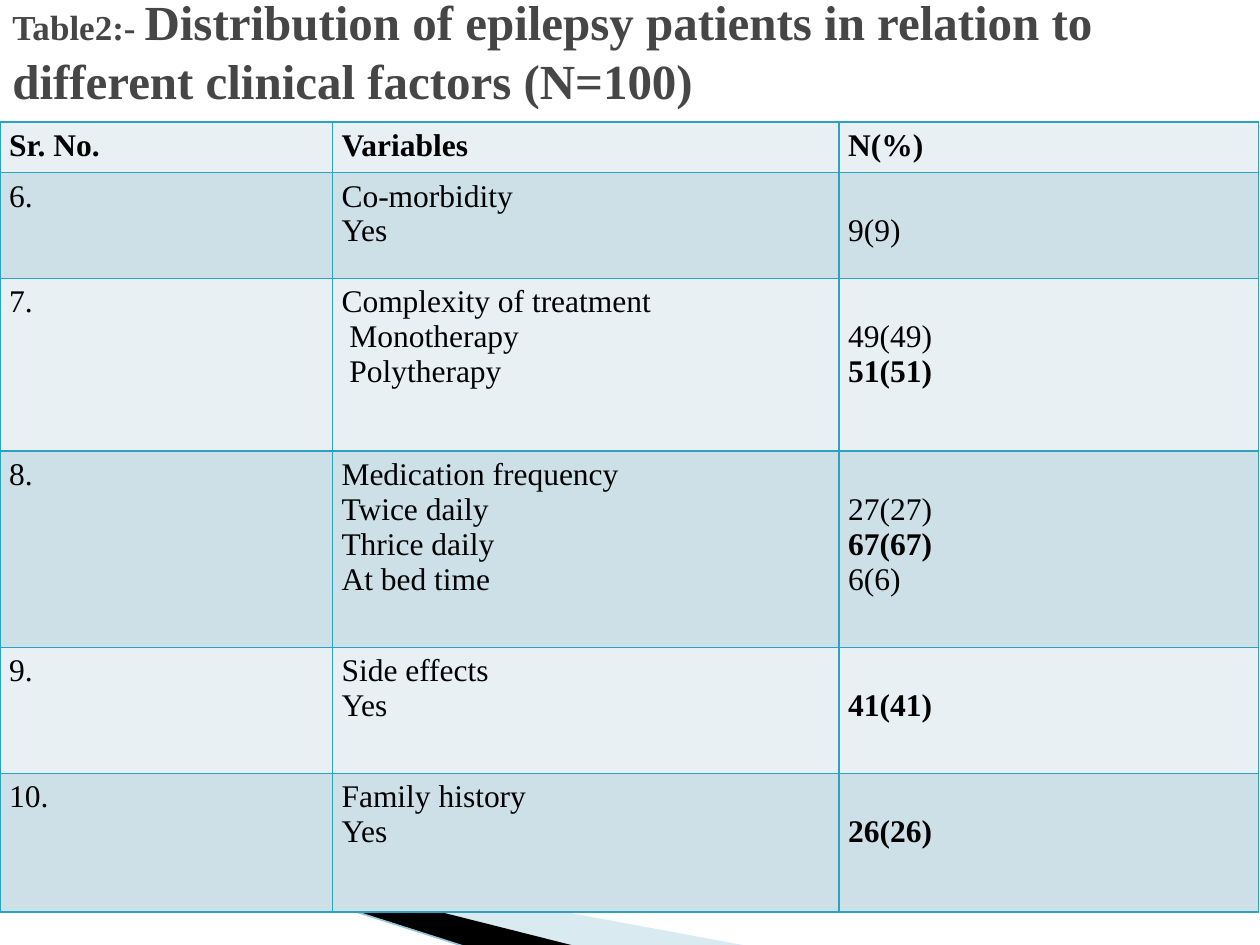
from lxml.etree import SubElement
from pptx import Presentation
from pptx.dml.color import RGBColor
from pptx.enum.shapes import MSO_CONNECTOR
from pptx.enum.text import MSO_ANCHOR
from pptx.oxml.ns import qn
from pptx.util import Pt

FONT = "Times New Roman"
BLACK = RGBColor(0x00, 0x00, 0x00)
GREY = RGBColor(0x46, 0x46, 0x46)
TEAL = RGBColor(0x2D, 0xA2, 0xBF)
PALE_TEAL = RGBColor(0x97, 0xC5, 0xD8)
WEDGE_BLUE = RGBColor(0xA0, 0xCB, 0xDC)
BANDS = [RGBColor(0xE8, 0xF0, 0xF4), RGBColor(0xCD, 0xE0, 0xE8)]
LINE_HEIGHT = 20


def add_text(p, text, size=18, bold=False, color=BLACK, indent=0):
    if indent:
        p._p.get_or_add_pPr().set("marL", str(Pt(indent)))
    r = p.add_run()
    r.text = text
    r.font.name = FONT
    r.font.size = Pt(size)
    r.font.bold = bold
    r.font.color.rgb = color


def add_borders(cell):
    tc_pr = cell._tc.get_or_add_tcPr()
    for side in ("lnL", "lnR", "lnT", "lnB"):
        ln = SubElement(tc_pr, qn(f"a:{side}"), w=str(Pt(1)))
        fill = SubElement(ln, qn("a:solidFill"))
        SubElement(fill, qn("a:srgbClr"), val=str(TEAL))


prs = Presentation()
prs.slide_width, prs.slide_height = Pt(720), Pt(540)
s = prs.slides.add_slide(prs.slide_layouts[6])

# Corner decoration
wedges = [
    (WEDGE_BLUE, 40, [(39.6, 468.7), (428.4, 540.7), (328.3, 540.7), (39.6, 468)]),
    (BLACK, 100, [(38.2, 467.3), (329, 540.7), (267.8, 541.4), (38.9, 468)]),
]
for color, opacity, points in wedges:
    start, *rest = [(Pt(x), Pt(y)) for x, y in points]
    builder = s.shapes.build_freeform(*start)
    builder.add_line_segments(rest, close=True)
    sp = builder.convert_to_shape()
    sp.shadow.inherit = False
    sp.fill.solid()
    sp.fill.fore_color.rgb = color
    sp.line.fill.background()
    if opacity < 100:
        clr = sp.fill._xPr.find(qn("a:solidFill"))[0]
        SubElement(clr, qn("a:alpha"), val=str(opacity * 1000))

edge = s.shapes.add_connector(
    MSO_CONNECTOR.STRAIGHT, Pt(-0.7), Pt(455.8), Pt(267.1), Pt(541.4))
edge.line.color.rgb = PALE_TEAL
edge.line.width = Pt(0.95)
SubElement(edge._element.spPr, qn("a:effectLst"))

# Title
title = s.shapes.add_textbox(Pt(0), Pt(-13.7), Pt(720), Pt(85))
tf = title.text_frame
tf.word_wrap = True
tf.vertical_anchor = MSO_ANCHOR.MIDDLE
p = tf.paragraphs[0]
add_text(p, "Table2:- ", size=20, bold=True, color=GREY)
add_text(p, "Distribution of epilepsy patients in relation to different "
            "clinical factors (N=100)", size=28, bold=True, color=GREY)

# Table: row height, number, variable, levels, values, bold values, level indent
HEADER = ("Sr. No.", "Variables", "N(%)")
FACTORS = [
    (60.5, "6.", "Co-morbidity", ["Yes"], ["9(9)"], [], 0),
    (98.6, "7.", "Complexity of treatment", ["Monotherapy", "Polytherapy"],
     ["49(49)", "51(51)"], ["51(51)"], 4.5),
    (112.3, "8.", "Medication frequency",
     ["Twice daily", "Thrice daily", "At bed time"],
     ["27(27)", "67(67)", "6(6)"], ["67(67)"], 0),
    (72, "9.", "Side effects", ["Yes"], ["41(41)"], ["41(41)"], 0),
    (79.2, "10.", "Family history", ["Yes"], ["26(26)"], ["26(26)"], 0),
]
heights = [27] + [factor[0] for factor in FACTORS]
widths = [190, 289.5, 239.8]

table = s.shapes.add_table(len(heights), len(widths), Pt(0), Pt(69.8),
                           Pt(sum(widths)), Pt(sum(heights))).table
for column, width in zip(table.columns, widths):
    column.width = Pt(width)
for i, (row, height) in enumerate(zip(table.rows, heights)):
    row.height = Pt(height)
    for cell in row.cells:
        add_borders(cell)
        cell.fill.solid()
        cell.fill.fore_color.rgb = BANDS[i % 2]
        cell.margin_left = cell.margin_right = Pt(5.2)
        cell.margin_top = cell.margin_bottom = Pt(3.6)

for cell, text in zip(table.rows[0].cells, HEADER):
    add_text(cell.text_frame.paragraphs[0], text, bold=True)

for i, (_, number, variable, levels, values, bold, indent) in enumerate(FACTORS, 1):
    number_cell, variable_cell, value_cell = table.rows[i].cells
    add_text(number_cell.text_frame.paragraphs[0], number)
    add_text(variable_cell.text_frame.paragraphs[0], variable)
    for level in levels:
        add_text(variable_cell.text_frame.add_paragraph(), level, indent=indent)
    # Values start one line down, level with the first answer
    value_cell.margin_top = Pt(3.6 + LINE_HEIGHT)
    tf = value_cell.text_frame
    for j, value in enumerate(values):
        p = tf.add_paragraph() if j else tf.paragraphs[0]
        add_text(p, value, bold=value in bold)

prs.save("out.pptx")
